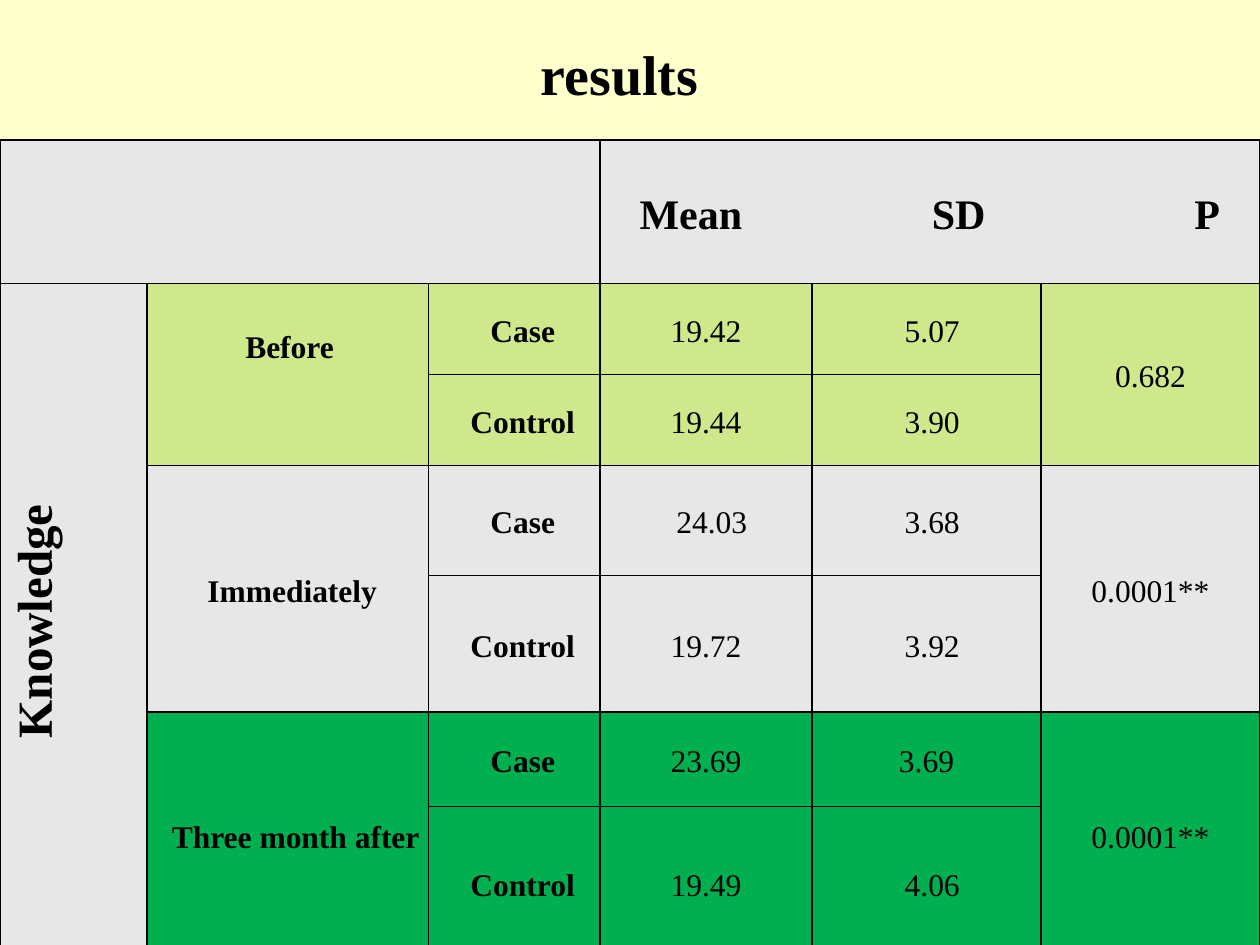
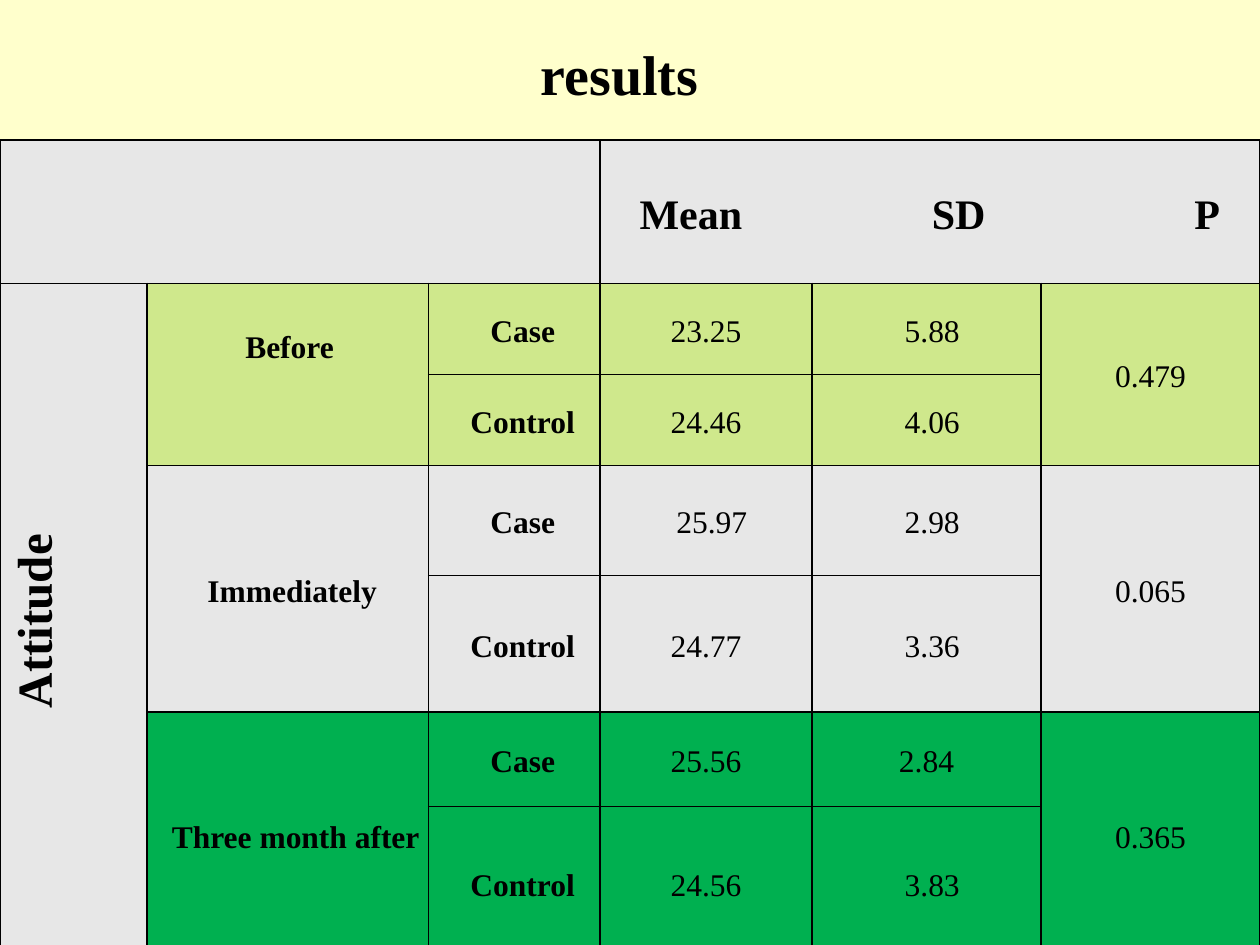
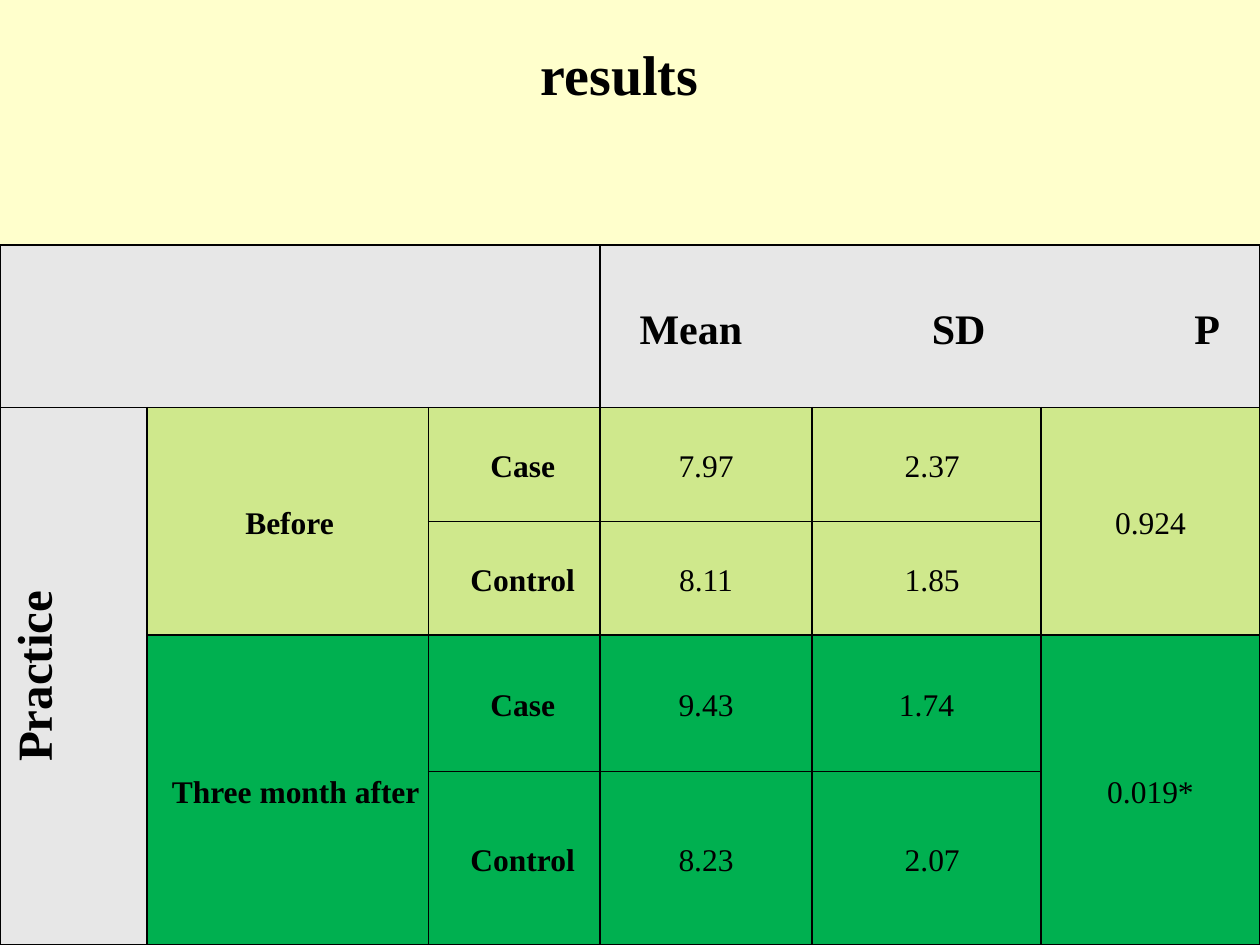
from dataclasses import dataclass
from pptx import Presentation
from pptx.dml.color import RGBColor as RGB
from pptx.enum.text import MSO_ANCHOR as Anchor, PP_ALIGN as Align
from pptx.oxml import parse_xml
from pptx.oxml.ns import nsdecls
from pptx.util import Pt


@dataclass
class Theme:
    font: str = "Times New Roman"
    ink: str = "000000"
    page: str = "FFFFCC"
    grey: str = "E7E7E7"
    lime: str = "CFE88C"
    green: str = "00B050"
    title: int = 32
    side: int = 28
    head: int = 24
    body: int = 18
    line: float = 1


look = Theme()


def write(frame, text, size, bold=True, align=Align.CENTER, indent=0):
    para = frame.paragraphs[0]
    para.text = text
    para.alignment = align
    if indent:
        para._p.get_or_add_pPr().set("marL", str(Pt(indent)))
    font = para.runs[0].font
    for key, val in {"name": look.font, "size": Pt(size), "bold": bold}.items():
        setattr(font, key, val)
    font.color.rgb = RGB.from_string(look.ink)
    return para


def paint(cell, color):
    props = cell._tc.get_or_add_tcPr()
    for side in "LRTB":
        props.append(parse_xml(
            f'<a:ln{side} {nsdecls("a")} w="{Pt(look.line)}"><a:solidFill>'
            f'<a:srgbClr val="{look.ink}"/></a:solidFill></a:ln{side}>'))
    cell.fill.solid()
    cell.fill.fore_color.rgb = RGB.from_string(color)
    form = {"margin_left": Pt(5), "margin_right": Pt(5), "margin_top": 0,
            "margin_bottom": 0, "vertical_anchor": Anchor.MIDDLE}
    for key, val in form.items():
        setattr(cell, key, val)


# Stages: label, fill, label indent, indents of (mean, SD) for case and control
before = ("Before", look.lime, 2, ((0, 6.5), (0, 6.5)))
soon = ("Immediately", look.grey, 5, ((6.5, 6.5), (0, 6.5)))
later = ("Three month after", look.green, 9, ((0, 0), (0, 6.5)))

# Tables: topic, top, row heights, space under "Before", stages,
# then (case mean, SD), (control mean, SD), P for each stage
long = (82, 52, 52, 63, 78, 54, 87)
short = (93, 65, 65, 78, 99)
tables = [
    ("Knowledge", 80, long, 34, (before, soon, later), [
        (("19.42", "5.07"), ("19.44", "3.90"), "0.682"),
        (("24.03", "3.68"), ("19.72", "3.92"), "0.0001**"),
        (("23.69", "3.69"), ("19.49", "4.06"), "0.0001**")]),
    ("Attitude", 80, long, 34, (before, soon, later), [
        (("23.25", "5.88"), ("24.46", "4.06"), "0.479"),
        (("25.97", "2.98"), ("24.77", "3.36"), "0.065"),
        (("25.56", "2.84"), ("24.56", "3.83"), "0.365")]),
    ("Practice", 140, short, 0, (before, later), [
        (("7.97", "2.37"), ("8.11", "1.85"), "0.924"),
        (("9.43", "1.74"), ("8.23", "2.07"), "0.019*")]),
]
widths = (84, 161, 98, 121, 131, 125)

# Shared page and title place
deck = Presentation()
deck.slide_width, deck.slide_height = Pt(720), Pt(540)
plain = deck.slide_layouts[5]
back = plain.slide_master.background.fill
back.solid()
back.fore_color.rgb = RGB.from_string(look.page)
spot = plain.placeholders[0]
for key, val in {"left": 55.5, "top": 17.5, "width": 597, "height": 47}.items():
    setattr(spot, key, Pt(val))

for topic, top, heights, gap, stages, data in tables:
    slide = deck.slides.add_slide(plain)
    title = slide.shapes.title.text_frame
    title.vertical_anchor = Anchor.BOTTOM
    write(title, "results", look.title)

    # Empty grid
    grid = slide.shapes.add_table(len(heights), len(widths), 0, Pt(top),
                                  Pt(sum(widths)), Pt(sum(heights))).table
    grid.first_row = grid.horz_banding = False
    for col, width in zip(grid.columns, widths):
        col.width = Pt(width)
    for row, height in zip(grid.rows, heights):
        row.height = Pt(height)
    for r in range(len(heights)):
        for c in range(len(widths)):
            tone = stages[(r - 1) // 2][1] if r and c else look.grey
            paint(grid.cell(r, c), tone)

    # Header row, spread by tab stops
    grid.cell(0, 0).merge(grid.cell(0, 2))
    head = grid.cell(0, 3)
    head.merge(grid.cell(0, 5))
    head.margin_left = Pt(22.5)
    para = write(head.text_frame, "Mean\tSD\tP", look.head, align=Align.LEFT)
    para.line_spacing = 1.15
    para._p.get_or_add_pPr().append(parse_xml(
        f'<a:tabLst {nsdecls("a")}><a:tab pos="{Pt(167)}" algn="l"/>'
        f'<a:tab pos="{Pt(317)}" algn="l"/></a:tabLst>'))

    # Topic, read upwards
    side = grid.cell(1, 0)
    side.merge(grid.cell(len(heights) - 1, 0))
    side._tc.get_or_add_tcPr().set("vert", "vert270")
    write(side.text_frame, topic, look.side).line_spacing = 1.15

    # Two rows per stage
    for i, ((label, _, shift, moves), (*pairs, p)) in enumerate(zip(stages, data)):
        r = 1 + 2 * i
        items = [(r, 1, label, True, shift), (r, 5, p, False, 0)]
        for c in (1, 5):
            grid.cell(r, c).merge(grid.cell(r + 1, c))
        for j, group in enumerate(("Case", "Control")):
            items.append((r + j, 2, group, True, 9.4))
            for k in range(2):
                items.append((r + j, 3 + k, pairs[j][k], False, moves[j][k]))
        for y, x, text, bold, indent in items:
            para = write(grid.cell(y, x).text_frame, text, look.body, bold,
                         indent=indent)
            para.line_spacing = 1.15
    grid.cell(1, 1).margin_bottom = Pt(gap)

deck.save("out.pptx")
